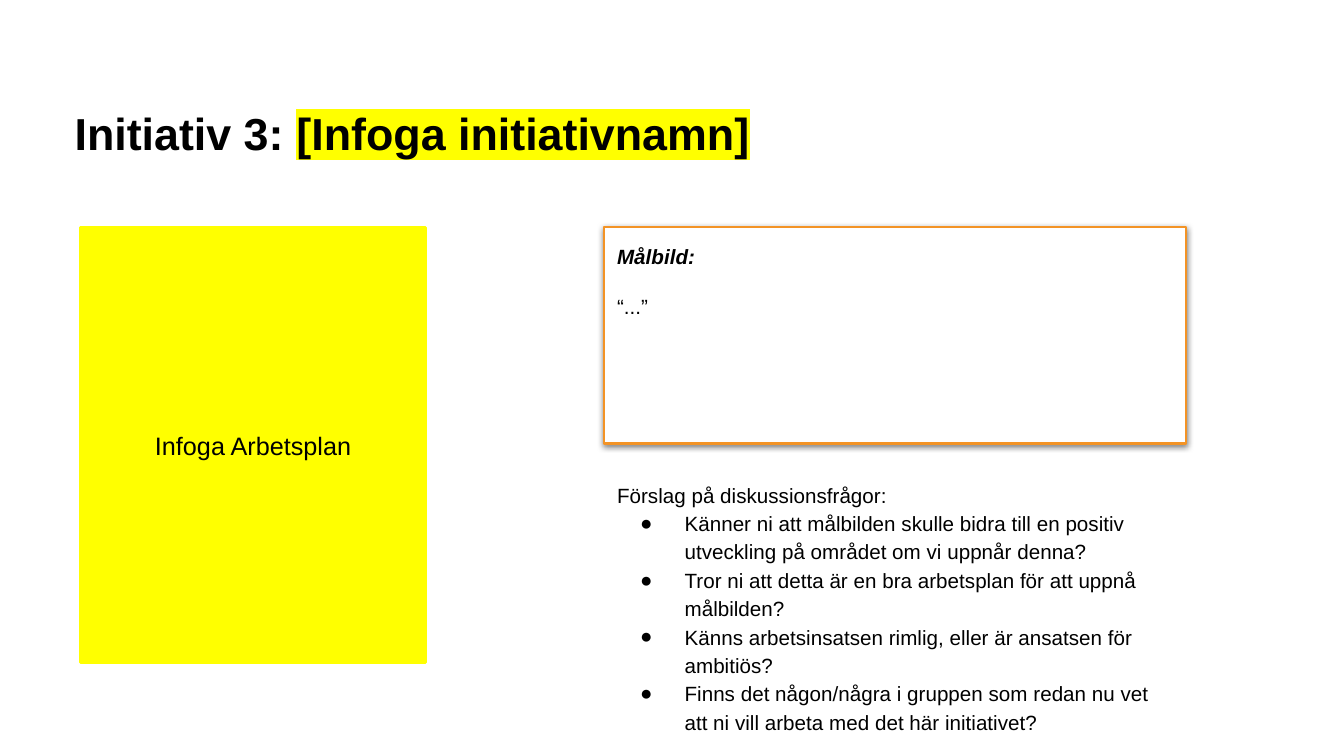
from lxml import etree
from pptx import Presentation
from pptx import util as u
from pptx.dml.color import RGBColor
from pptx.enum import shapes, text
from pptx.oxml import ns

BLACK = RGBColor(0, 0, 0)
WHITE = RGBColor(255, 255, 255)
YELLOW = RGBColor(255, 255, 0)
ORANGE = RGBColor(0xF3, 0x93, 0x25)
FONT = "Arial"
BODY_SIZE = 14.7
QUESTIONS = [
    "Känner ni att målbilden skulle bidra till en positiv utveckling på området om vi uppnår denna?",
    "Tror ni att detta är en bra arbetsplan för att uppnå målbilden?",
    "Känns arbetsinsatsen rimlig, eller är ansatsen för ambitiös?",
    "Finns det någon/några i gruppen som redan nu vet att ni vill arbeta med det här initiativet?",
]


def add_child(parent, tag, **attrs):
    return etree.SubElement(parent, ns.qn(tag), {k: str(v) for k, v in attrs.items()})


def style_run(r, size, bold=False, italic=False):
    r.font.name = FONT
    r.font.size = u.Pt(size)
    r.font.bold = bold
    r.font.italic = italic
    r.font.color.rgb = BLACK


def highlight(r, color):
    rPr = r.font._element
    mark = etree.Element(ns.qn("a:highlight"))
    add_child(mark, "a:srgbClr", val=color)
    rPr.find(ns.qn("a:solidFill")).addnext(mark)


def set_frame(sp, inset_x, inset_y, anchor):
    tf = sp.text_frame
    tf.word_wrap = True
    tf.margin_left = tf.margin_right = u.Inches(inset_x)
    tf.margin_top = tf.margin_bottom = u.Inches(inset_y)
    tf.vertical_anchor = anchor
    return tf


def add_text_box(s, box, inset_x, inset_y, anchor):
    sp = s.shapes.add_textbox(*map(u.Inches, box))
    return set_frame(sp, inset_x, inset_y, anchor)


def add_rectangle(s, box, fill, line, width):
    sp = s.shapes.add_shape(shapes.MSO_SHAPE.RECTANGLE, *map(u.Inches, box))
    sp.shadow.inherit = False
    sp.fill.solid()
    sp.fill.fore_color.rgb = fill
    sp.line.color.rgb = line
    sp.line.width = u.Pt(width)
    return sp


def add_shadow(sp):
    effects = sp._element.spPr.find(ns.qn("a:effectLst"))
    shadow = add_child(effects, "a:outerShdw", blurRad=u.Pt(4.5), dist=u.Pt(1.5),
                       dir=90 * 60000, algn="bl", rotWithShape=0)
    color = add_child(shadow, "a:srgbClr", val=BLACK)
    add_child(color, "a:alpha", val=50000)


def write_paragraph(p, wording, bold=False, italic=False):
    p.text = wording
    p.alignment = text.PP_ALIGN.LEFT
    p.line_spacing = 1.15
    style_run(p.runs[0], BODY_SIZE, bold, italic)


def add_bullet(p):
    pPr = p._p.get_or_add_pPr()
    pPr.set("marL", str(u.Inches(0.67)))
    pPr.set("indent", str(u.Inches(-0.44)))
    add_child(add_child(pPr, "a:buClr"), "a:srgbClr", val=BLACK)
    add_child(pPr, "a:buFont", typeface=FONT)
    add_child(pPr, "a:buChar", char="●")


def add_title(s):
    tf = add_text_box(s, (0.67, 0.85, 12.1, 0.78), 0.07, 0.04, text.MSO_ANCHOR.BOTTOM)
    p = tf.paragraphs[0]
    p.line_spacing = 0.95
    for wording in ("Initiativ 3: ", "[Infoga initiativnamn]"):
        r = p.add_run()
        r.text = wording
        style_run(r, 32, bold=True)
    highlight(r, YELLOW)


def add_work_plan(s):
    sp = add_rectangle(s, (0.8, 2.26, 3.42, 4.31), YELLOW, YELLOW, 2)
    tf = set_frame(sp, 0.1, 0.05, text.MSO_ANCHOR.MIDDLE)
    p = tf.paragraphs[0]
    p.text = "Infoga Arbetsplan"
    p.alignment = text.PP_ALIGN.CENTER
    style_run(p.runs[0], 18)


def add_goal(s):
    sp = add_rectangle(s, (5.99, 2.25, 5.77, 2.15), WHITE, ORANGE, 1.5)
    add_shadow(sp)
    tf = set_frame(sp, 0.13, 0.13, text.MSO_ANCHOR.TOP)
    write_paragraph(tf.paragraphs[0], "Målbild:", bold=True, italic=True)
    p = tf.add_paragraph()
    write_paragraph(p, "“...”")
    p.space_before = p.space_after = u.Pt(16)


def add_questions(s):
    tf = add_text_box(s, (5.99, 4.62, 5.67, 2.36), 0.13, 0.13, text.MSO_ANCHOR.TOP)
    write_paragraph(tf.paragraphs[0], "Förslag på diskussionsfrågor:")
    for question in QUESTIONS:
        p = tf.add_paragraph()
        write_paragraph(p, question)
        add_bullet(p)


def main():
    prs = Presentation()
    prs.slide_width = u.Inches(13.33)
    prs.slide_height = u.Inches(7.5)
    s = prs.slides.add_slide(prs.slide_layouts[6])
    add_title(s)
    add_work_plan(s)
    add_goal(s)
    add_questions(s)
    prs.save("out.pptx")


if __name__ == "__main__":
    main()
